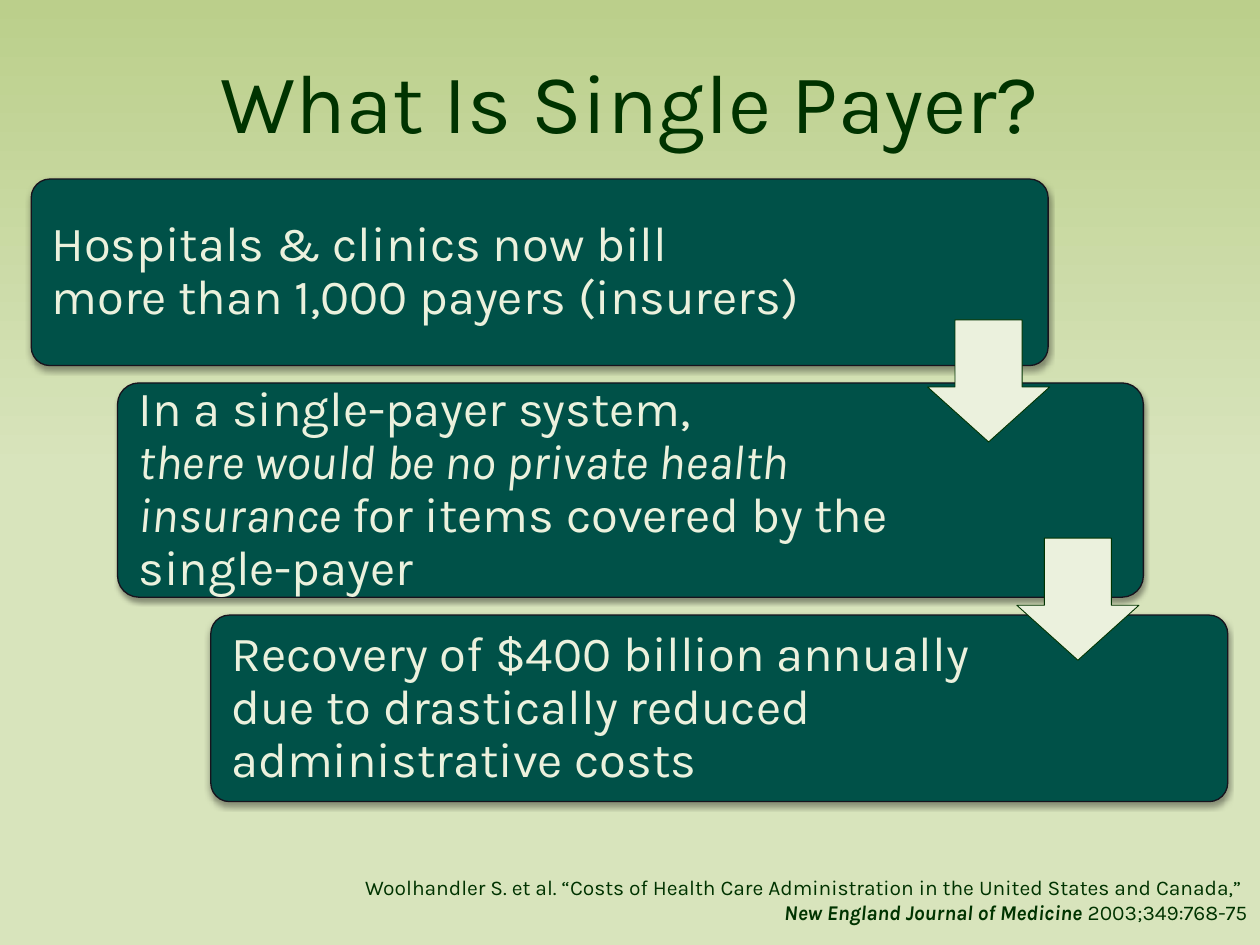
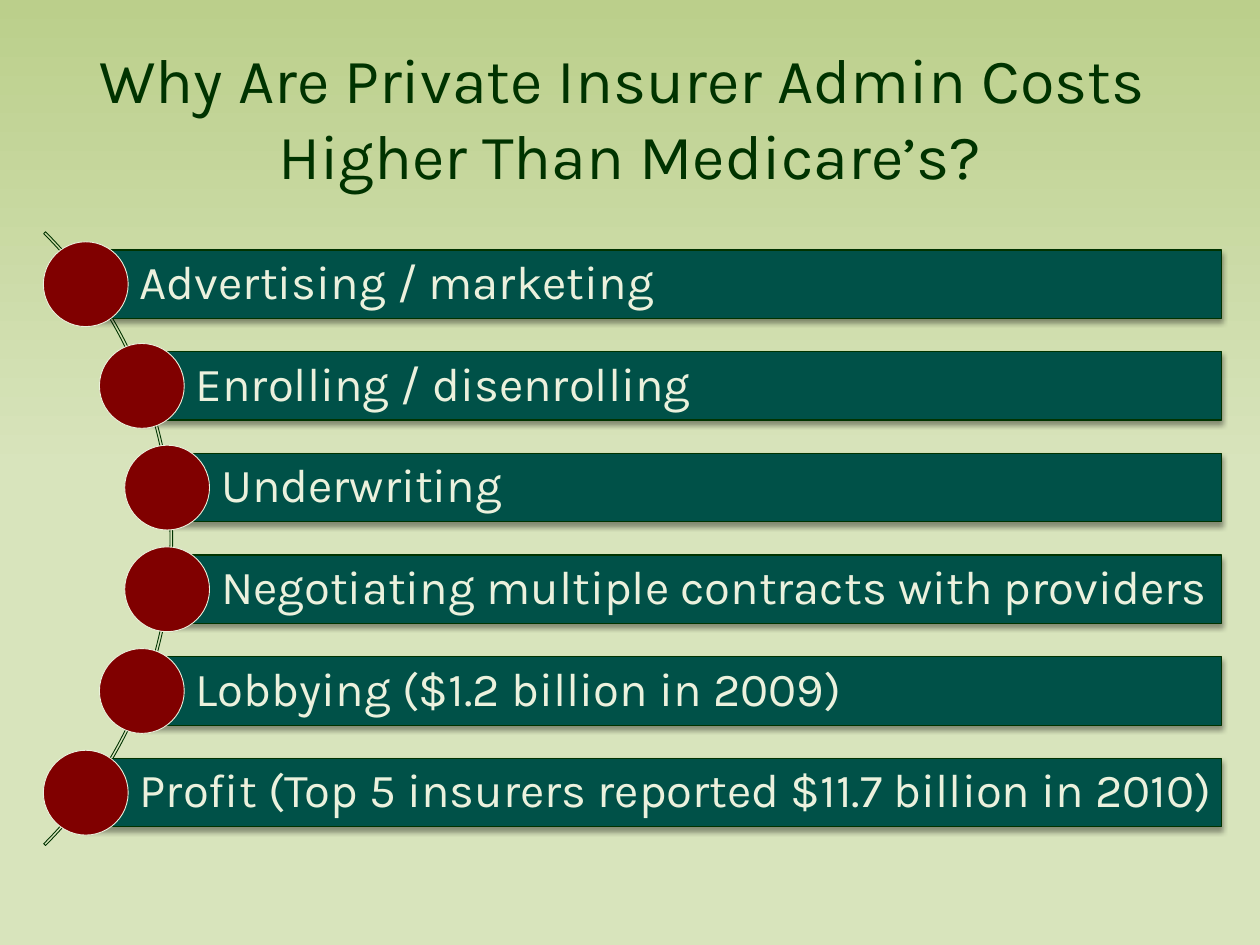
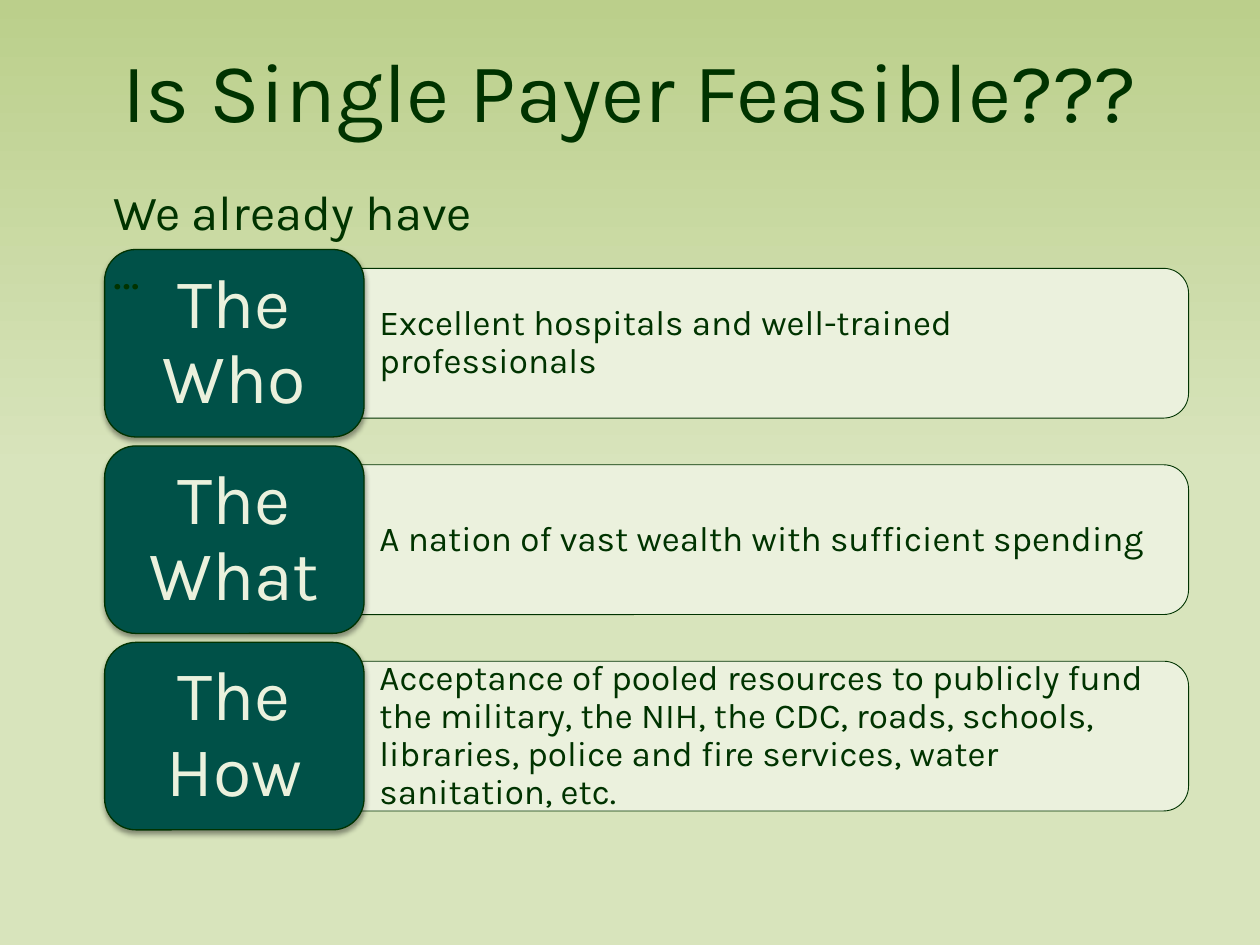
from copy import deepcopy
from dataclasses import dataclass
from typing import Optional, Sequence

from lxml.etree import SubElement
from pptx import Presentation
from pptx.dml.color import RGBColor
from pptx.enum.shapes import MSO_SHAPE as Preset
from pptx.enum.text import MSO_ANCHOR as Anchor, PP_ALIGN as Align
from pptx.oxml.ns import qn
from pptx.shapes.autoshape import Shape
from pptx.slide import Slide
from pptx.text.text import TextFrame
from pptx.util import Cm, Pt

# Shared look; every length below is in centimetres
FONT = "Karla"
SLIDE_WIDTH, SLIDE_HEIGHT = 25.4, 19.05
TITLE_HEIGHT = 3.18

DARK_GREEN = RGBColor(0x00, 0x33, 0x00)
TEAL = RGBColor(0x00, 0x51, 0x48)
CREAM = RGBColor(0xEB, 0xF1, 0xDD)
MAROON = RGBColor(0x80, 0x00, 0x00)
INK = RGBColor(0x17, 0x13, 0x1D)
SKY_TOP = RGBColor(0xBB, 0xCF, 0x8B)
SKY_BOTTOM = RGBColor(0xD8, 0xE4, 0xBC)


@dataclass(frozen=True)
class Box:
    left: float
    top: float
    width: float
    height: float

    @property
    def emu(self) -> tuple:
        return Cm(self.left), Cm(self.top), Cm(self.width), Cm(self.height)


@dataclass(frozen=True)
class Span:
    text: str
    italic: bool = False
    bold: bool = False


@dataclass(frozen=True)
class TextStyle:
    size: int
    color: RGBColor
    align: Align = Align.LEFT
    anchor: Anchor = Anchor.MIDDLE
    spacing: float = 1.0
    insets: tuple = (0.25, 0.13, 0.25, 0.13)  # left, top, right, bottom


@dataclass(frozen=True)
class ShapeStyle:
    fill: Optional[RGBColor]
    line: RGBColor
    line_width: float = 0.5
    shadow: bool = False


STEP_TEXT = TextStyle(28, CREAM, spacing=0.9, insets=(0.3, 0, 4.3, 0))
CITATION_TEXT = TextStyle(12, DARK_GREEN, Align.RIGHT, Anchor.TOP)
COST_TEXT = TextStyle(27, CREAM, spacing=0.9, insets=(1.09, 0.18, 0.18, 0.18))
ASSET_NAME_TEXT = TextStyle(40, CREAM, Align.CENTER, spacing=0.9, insets=(0.43, 0.2, 0.43, 0.2))
ASSET_DETAIL_TEXT = TextStyle(20, DARK_GREEN, spacing=0.9, insets=(1.32, 0, 0.69, 0))
LEAD_IN_TEXT = TextStyle(28, DARK_GREEN, anchor=Anchor.TOP)

STEP_SHAPE = ShapeStyle(TEAL, INK, 0.75, shadow=True)
CARD_SHAPE = ShapeStyle(TEAL, DARK_GREEN, 0.75, shadow=True)
PALE_SHAPE = ShapeStyle(CREAM, DARK_GREEN)
DOT_SHAPE = ShapeStyle(MAROON, CREAM)
ARC_SHAPE = ShapeStyle(None, DARK_GREEN)


# Drawing helpers
def write(frame: TextFrame, style: TextStyle, *lines: Sequence[Span]) -> None:
    frame.word_wrap = True
    frame.vertical_anchor = style.anchor
    (frame.margin_left, frame.margin_top,
     frame.margin_right, frame.margin_bottom) = map(Cm, style.insets)
    frame.text = "\n".join("" for _ in lines)
    for paragraph, spans in zip(frame.paragraphs, lines):
        paragraph.alignment = style.align
        paragraph.line_spacing = style.spacing
        paragraph.text = spans[0].text
        for span in spans[1:]:
            paragraph.add_run().text = span.text
        # A line break splits the only span of a title into several runs
        formats = spans if len(spans) > 1 else spans * len(paragraph.runs)
        for run, span in zip(paragraph.runs, formats):
            run.font.name = FONT
            run.font.size = Pt(style.size)
            run.font.color.rgb = style.color
            run.font.italic, run.font.bold = span.italic, span.bold


def add_text(slide: Slide, box: Box, style: TextStyle, *lines: Sequence[Span]) -> None:
    write(slide.shapes.add_textbox(*box.emu).text_frame, style, *lines)


def add_preset(slide: Slide, preset: Preset, box: Box, style: ShapeStyle,
               adjustments: Sequence[float] = ()) -> Shape:
    shape = slide.shapes.add_shape(preset, *box.emu)
    for index, value in enumerate(adjustments):
        shape.adjustments[index] = value
    if style.fill is None:
        shape.fill.background()
    else:
        shape.fill.solid()
        shape.fill.fore_color.rgb = style.fill
    shape.line.color.rgb = style.line
    shape.line.width = Pt(style.line_width)
    shape.shadow.inherit = False
    if style.shadow:
        effects = shape.element.spPr.find(qn("a:effectLst"))
        outer = SubElement(effects, qn("a:outerShdw"), blurRad=str(Pt(3.1)),
                           dist=str(Pt(2)), dir="5400000", rotWithShape="0")
        black = SubElement(outer, qn("a:srgbClr"), val="000000")
        SubElement(black, qn("a:alpha"), val="38000")
    return shape


def add_titled_slide(prs: Presentation, title: str, top: float, size: int,
                     margin: float = 1.27) -> Slide:
    slide = prs.slides.add_slide(prs.slide_layouts[6])
    box = Box(margin, top, SLIDE_WIDTH - 2 * margin, TITLE_HEIGHT)
    add_text(slide, box, TextStyle(size, DARK_GREEN, Align.CENTER), [Span(title)])
    return slide


def paint_background(prs: Presentation) -> None:
    master = prs.slide_master
    fill = master.background.fill
    fill.gradient()
    fill.gradient_angle = 270
    stop_list = next(master.element.iter(qn("a:gsLst")))
    stop_list.append(deepcopy(stop_list[-1]))
    stops = zip(fill.gradient_stops, (0, 0.5, 1), (SKY_TOP, SKY_BOTTOM, SKY_BOTTOM))
    for stop, position, color in stops:
        stop.position = position
        stop.color.rgb = color


# Slide 1: descending steps joined by arrows
def add_definition(prs: Presentation) -> None:
    slide = add_titled_slide(prs, "What Is Single Payer?", 0.43, 48)
    steps = (
        (Box(0.63, 3.61, 20.5, 3.76),
         ([Span("Hospitals & clinics now bill")],
          [Span("more than 1,000 payers (insurers)")])),
        (Box(2.37, 7.72, 20.68, 4.32),
         ([Span("In a single-payer system,")],
          [Span("there would be no private health insurance ", italic=True),
           Span("for items covered by the single-payer")])),
        (Box(4.25, 12.4, 20.5, 3.76),
         ([Span("Recovery of $400 billion annually due to drastically "
                "reduced administrative costs")],)),
    )
    for box, lines in steps:
        step = add_preset(slide, Preset.ROUNDED_RECTANGLE, box, STEP_SHAPE, [0.1])
        write(step.text_frame, STEP_TEXT, *lines)
    for left, top in ((18.7, 6.45), (20.5, 10.85)):
        add_preset(slide, Preset.DOWN_ARROW, Box(left, top, 2.46, 2.46),
                   PALE_SHAPE, [0.55, 0.45])
    add_text(slide, Box(7.09, 17.5, 18.31, 1.3), CITATION_TEXT,
             [Span("Woolhandler S. et al. “Costs of Health Care Administration "
                   "in the United States and Canada,” ")],
             [Span("New England Journal of Medicine", italic=True, bold=True),
              Span(" 2003;349:768-75")])


# Slide 2: cost bars fanned along an arc
def add_admin_costs(prs: Presentation) -> None:
    slide = add_titled_slide(
        prs, "Why Are Private Insurer Admin Costs \vHigher Than Medicare’s?",
        0.76, 36, margin=0)
    add_preset(slide, Preset.BLOCK_ARC, Box(-14.02, 2.11, 17.5, 17.5),
               ARC_SHAPE, [189, 27, 0.003])
    costs = (
        (1.73, "Advertising / marketing"),
        (2.86, "Enrolling / disenrolling"),
        (3.37, "Underwriting"),
        (3.37, "Negotiating multiple contracts with providers"),
        (2.86, "Lobbying ($1.2 billion in 2009)"),
        (1.73, "Profit (Top 5 insurers reported $11.7 billion in 2010)"),
    )
    first_center, pitch, bar_height, bar_right, dot = 5.73, 2.05, 1.38, 24.63, 1.71
    for row, (left, cost) in enumerate(costs):
        center = first_center + row * pitch
        bar = add_preset(slide, Preset.RECTANGLE,
                         Box(left, center - bar_height / 2, bar_right - left, bar_height),
                         CARD_SHAPE)
        write(bar.text_frame, COST_TEXT, [Span(cost)])
        add_preset(slide, Preset.OVAL,
                   Box(left - dot / 2, center - dot / 2, dot, dot), DOT_SHAPE)


# Slide 3: named cards, each with a detail panel
def add_feasibility(prs: Presentation) -> None:
    slide = add_titled_slide(prs, "Is Single Payer Feasible???", 0.2, 48)
    assets = (
        ("The Who", "Excellent hospitals and well-trained professionals"),
        ("The What", "A nation of vast wealth with sufficient spending"),
        ("The How", "Acceptance of pooled resources to publicly fund the military, "
                    "the NIH, the CDC, roads, schools, libraries, police and fire "
                    "services, water sanitation, etc."),
    )
    first_center, pitch, card_height = 6.92, 3.96, 3.78
    panel_left, panel_length, panel_depth = 6.33, 17.63, 3.02
    detail_width, detail_height = 17.48, 2.72
    for row, (name, detail) in enumerate(assets):
        center = first_center + row * pitch
        # The panel stands upright before its quarter turn
        panel = add_preset(slide, Preset.ROUND_2_SAME_RECTANGLE,
                           Box(panel_left + (panel_length - panel_depth) / 2,
                               center - panel_length / 2, panel_depth, panel_length),
                           PALE_SHAPE)
        panel.rotation = 90
        add_text(slide, Box(panel_left, center - detail_height / 2,
                            detail_width, detail_height),
                 ASSET_DETAIL_TEXT, [Span(detail)])
        card = add_preset(slide, Preset.ROUNDED_RECTANGLE,
                          Box(2.11, center - card_height / 2, 5.23, card_height),
                          CARD_SHAPE)
        write(card.text_frame, ASSET_NAME_TEXT, [Span(name)])
    add_text(slide, Box(2.03, 3.53, 8.2, 1.45), LEAD_IN_TEXT, [Span("We already have …")])


def main() -> None:
    prs = Presentation()
    prs.slide_width, prs.slide_height = Cm(SLIDE_WIDTH), Cm(SLIDE_HEIGHT)
    paint_background(prs)
    add_definition(prs)
    add_admin_costs(prs)
    add_feasibility(prs)
    prs.save("out.pptx")


if __name__ == "__main__":
    main()
